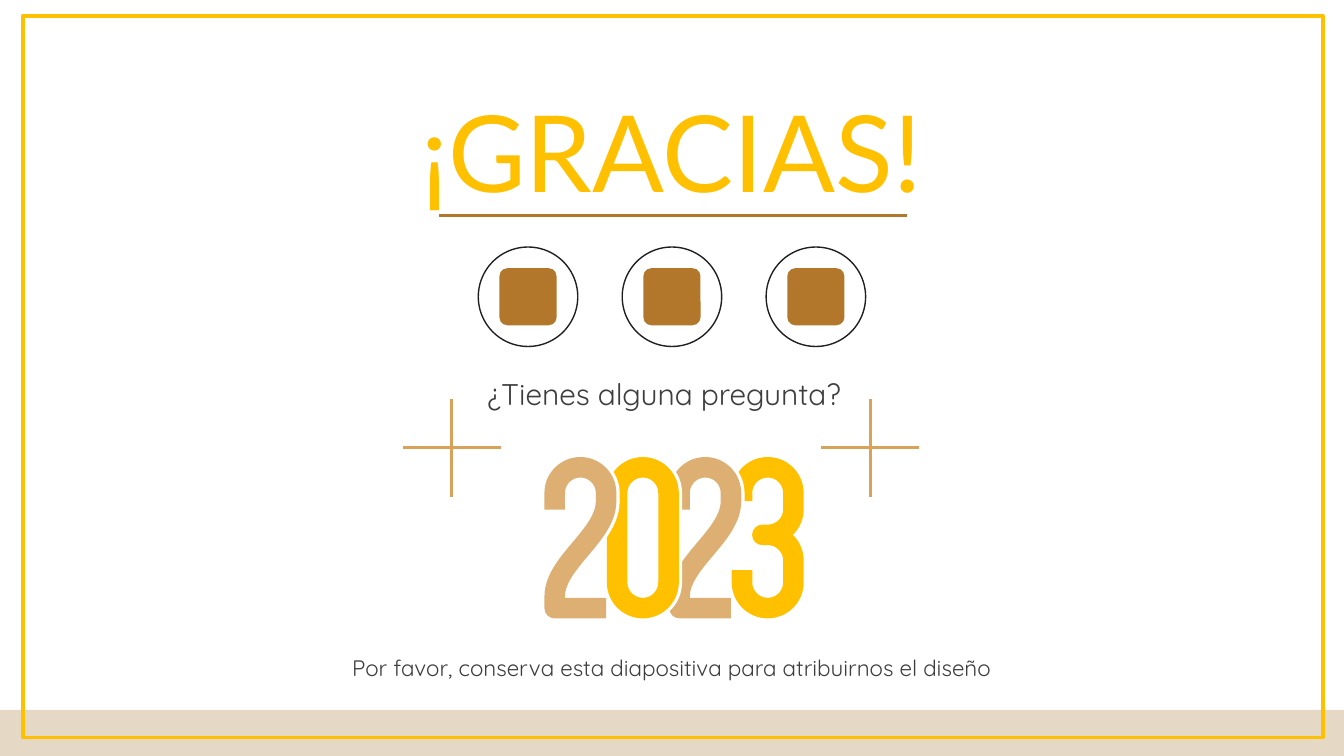
from math import cos, pi, radians, sin

from lxml import etree
from pptx import Presentation
from pptx.dml.color import RGBColor
from pptx.enum.shapes import MSO_CONNECTOR, MSO_SHAPE
from pptx.enum.text import MSO_ANCHOR, PP_ALIGN
from pptx.oxml.ns import qn
from pptx.util import Cm, Pt

RECT, ROUND, OVAL = MSO_SHAPE.RECTANGLE, MSO_SHAPE.ROUNDED_RECTANGLE, MSO_SHAPE.OVAL
LINE = MSO_CONNECTOR.STRAIGHT
MID, CENTER = MSO_ANCHOR.MIDDLE, PP_ALIGN.CENTER
HUES = {"gold": "FFC000", "bronze": "B2772A", "tan": "DEAF72", "cross": "D8A259",
        "sand": "E5D9C5", "ink": "3D3D3D", "ring": "1D1F21", "white": "FFFFFF"}
STEPS = 24


def tint(name):
    return RGBColor.from_string(HUES[name])


def paint(shape, fill=None, line=None, width=1):
    shape.shadow.inherit = False
    if fill:
        shape.fill.solid()
        shape.fill.fore_color.rgb = tint(fill)
    else:
        shape.fill.background()
    if line:
        shape.line.color.rgb = tint(line)
        shape.line.width = Pt(width)
    else:
        shape.line.fill.background()


def add_box(slide, kind, box, **look):
    shape = slide.shapes.add_shape(kind, *map(Cm, box))
    paint(shape, **look)
    return shape


def add_line(slide, ends, hue):
    line = slide.shapes.add_connector(LINE, *map(Cm, ends))
    line.line.color.rgb = tint(hue)
    line.line.width = Pt(1.5)
    etree.SubElement(line._element.spPr, qn("a:effectLst"))


def add_text(slide, box, text, face, size, hue):
    frame = slide.shapes.add_textbox(*map(Cm, box)).text_frame
    sides = ("margin_left", "margin_top", "margin_right", "margin_bottom")
    form = {"word_wrap": True, "vertical_anchor": MID, **dict.fromkeys(sides, Cm(0.25))}
    for key, value in form.items():
        setattr(frame, key, value)
    para = frame.paragraphs[0]
    para.alignment = CENTER
    run = para.add_run()
    run.text = text
    for key, value in {"name": face, "size": Pt(size)}.items():
        setattr(run.font, key, value)
    run.font.color.rgb = tint(hue)


def add_title(slide, box):
    left, top, wide, high = box
    add_text(slide, box, "¡GRACIAS!", "Lato", 57, "gold")
    rule = top + high - 0.08
    add_line(slide, (left + 1.78, rule, left + wide - 1.74, rule), "bronze")


def add_icons(slide, box):
    left, top, wide, size = box
    step = (wide - size) / 2
    icon = 1.08
    gap = (size - icon) / 2
    for i in range(3):
        x = left + i * step
        add_box(slide, OVAL, (x, top, size, size), fill="white", line="ring", width=0.75)
        tile = add_box(slide, ROUND, (x + gap, top + gap, icon, icon), fill="bronze")
        tile.adjustments[0] = 0.14


def add_cross(slide, box):
    left, top, size = box
    x, y = left + size / 2, top + size / 2
    add_line(slide, (left, y, left + size, y), "cross")
    add_line(slide, (x, top, x, top + size), "cross")


def arc(mid, rad, start, end):
    turns = [radians(start + (end - start) * n / STEPS) for n in range(STEPS + 1)]
    return [(rad + rad * cos(a), mid + rad * sin(a)) for a in turns]


def sway(rad, top, base):
    parts = [n / STEPS for n in range(STEPS + 1)]
    return [(rad + rad * cos(pi * t), top + (base - top) * t) for t in parts]


def draw_two(wide, high):
    rad = wide / 2
    hook = [(0, 0.3 * high)] + arc(rad, rad, 180, 360)
    return hook + sway(rad, 0.24 * high, 0.92 * high) + [(0, high), (wide, high)]


def draw_zero(wide, high):
    rad = wide / 2
    return arc(rad, rad, 180, 360) + arc(high - rad, rad, 0, 180)


def draw_three(wide, high):
    rad = wide / 2
    waist = 0.48 * high
    notch = [(rad - 0.1, waist)]
    upper = [(0, 0.24 * high)] + arc(rad, rad, 180, 360) + arc(waist - rad, rad, 0, 90)
    lower = arc(waist + rad, rad, -90, 0) + arc(high - rad, rad, 0, 180)
    return upper + notch + lower + [(0, 0.73 * high)]


def add_year(slide, box):
    left, top, wide, high = box
    pen, halo, pitch = 11, 14.5, 1.18
    thick = Pt(pen).cm
    digits = ((draw_two, "tan"), (draw_zero, "gold"), (draw_two, "tan"), (draw_three, "gold"))
    span = wide - (len(digits) - 1) * pitch - thick
    for i, (draw, hue) in reversed(list(enumerate(digits))):
        x, y = left + thick / 2 + i * pitch, top + thick / 2
        dots = [(Cm(x + dx), Cm(y + dy)) for dx, dy in draw(span, high - thick)]
        for line, width in (("white", halo), (hue, pen)):
            stroke = slide.shapes.build_freeform(*dots[0])
            stroke.add_line_segments(dots[1:], close=draw is draw_zero)
            paint(stroke.convert_to_shape(), line=line, width=width)


def add_thanks(slide, box):
    left, top, wide, high = box
    add_icons(slide, (left + 9.04, top + 4.67, 7.32, 1.88))
    add_title(slide, (left + 6.51, top + 1.52, 12.37, 2.64))
    add_text(slide, (left + 8.74, top + 6.22, 7.62, 2.44),
             "¿Tienes alguna pregunta?", "Quicksand", 16, "ink")
    add_text(slide, (left + 6.2, top + 12.24, 13, 0.76),
             "Por favor, conserva esta diapositiva para atribuirnos el diseño",
             "Quicksand", 12, "ink")
    add_box(slide, RECT, (left, top + high - 0.87, wide, 0.87), fill="sand")
    for x in (7.61, 15.52):
        add_cross(slide, (left + x, top + 7.54, 1.85))
    add_year(slide, (left + 10.29, top + 8.64, 4.9, 3.05))
    add_box(slide, RECT, (left + 0.43, top + 0.3, wide - 0.83, high - 0.65),
            line="gold", width=2)


def main():
    deck = Presentation()
    wide, high = 25.4, 14.29
    deck.slide_width, deck.slide_height = Cm(wide), Cm(high)
    slide = deck.slides.add_slide(deck.slide_layouts[6])
    add_thanks(slide, (0, 0, wide, high))
    deck.save("out.pptx")


if __name__ == "__main__":
    main()
